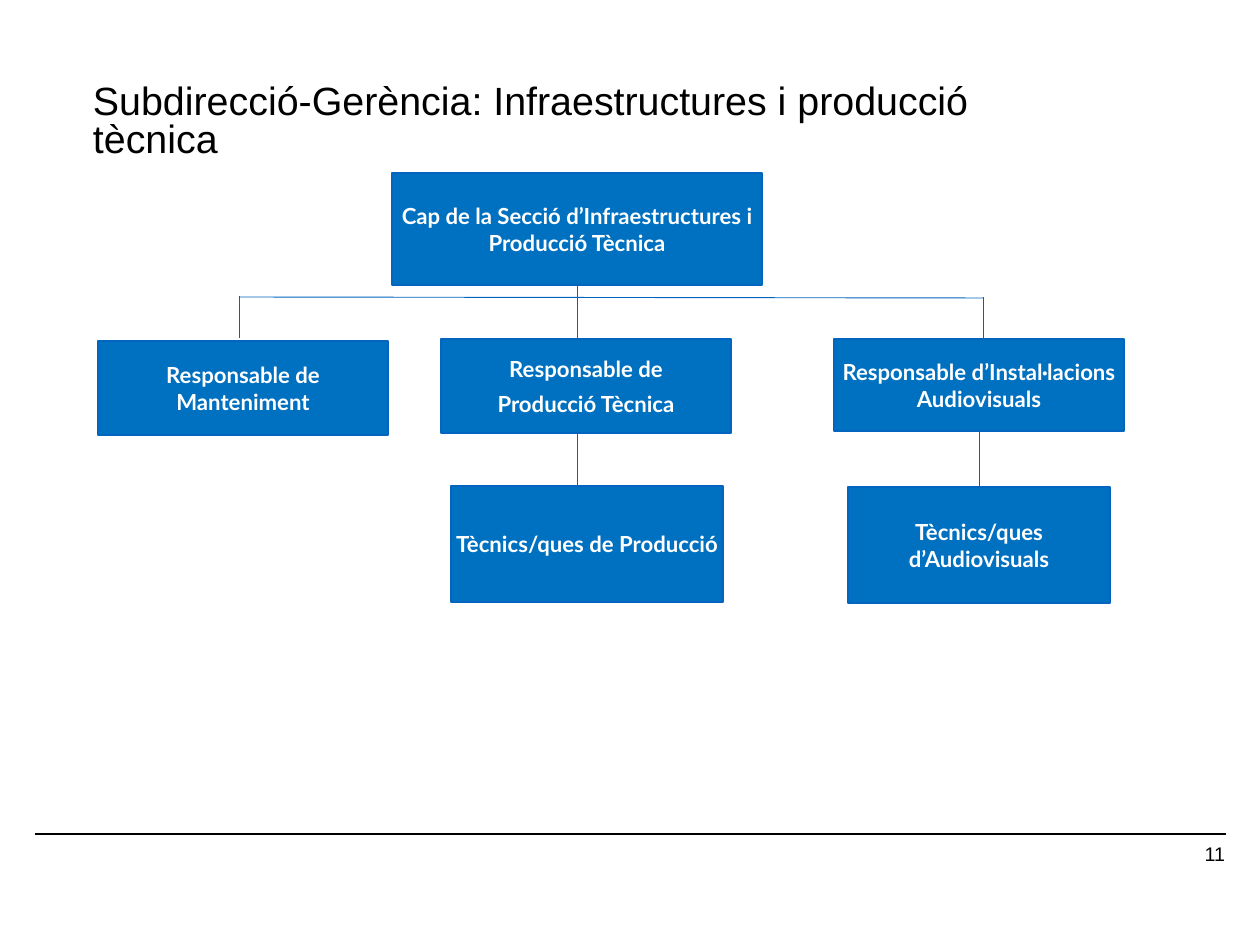
"""Build the organisation chart of the infrastructure and technical production section."""
from dataclasses import dataclass

from lxml.etree import SubElement
from pptx import Presentation
from pptx.dml.color import RGBColor
from pptx.enum.shapes import MSO_CONNECTOR, MSO_SHAPE
from pptx.enum.text import MSO_ANCHOR, PP_ALIGN
from pptx.oxml.ns import qn
from pptx.util import Pt

EMU_PER_PX = 10320
TOP, BOTTOM = 0, 2


@dataclass(frozen=True)
class Theme:
    box_fill: RGBColor = RGBColor(0x00, 0x70, 0xC0)
    box_line: RGBColor = RGBColor(0x03, 0x65, 0xC0)
    branch: RGBColor = RGBColor(0x00, 0x63, 0xBF)
    box_text: RGBColor = RGBColor(0xFF, 0xFF, 0xFF)
    ink: RGBColor = RGBColor(0x00, 0x00, 0x00)
    box_font: str = "Lato"
    text_font: str = "Arial"
    title_size: int = 32
    box_size: int = 18
    number_size: int = 16


THEME = Theme()


def px(length):
    return int(length * EMU_PER_PX)


def set_insets(frame, inset):
    frame.margin_left = frame.margin_right = px(inset)
    frame.margin_top = frame.margin_bottom = px(inset)


def style_font(font, name, size, color, bold=False):
    font.name = name
    font.size = Pt(size)
    font.color.rgb = color
    font.bold = bold


def add_box(slide, left, top, width, height, *lines):
    shape = slide.shapes.add_shape(
        MSO_SHAPE.RECTANGLE, px(left), px(top), px(width), px(height))
    shape.shadow.inherit = False
    shape.fill.solid()
    shape.fill.fore_color.rgb = THEME.box_fill
    shape.line.color.rgb = THEME.box_line
    shape.line.width = Pt(2)
    frame = shape.text_frame
    frame.word_wrap = True
    frame.vertical_anchor = MSO_ANCHOR.MIDDLE
    set_insets(frame, 4)
    for index, line in enumerate(lines):
        paragraph = frame.add_paragraph() if index else frame.paragraphs[0]
        paragraph.text = line
        paragraph.alignment = PP_ALIGN.CENTER
        if index:
            paragraph.space_before = Pt(3.2)
        paragraph.space_after = Pt(3.2)
        style_font(paragraph.font, THEME.box_font, THEME.box_size, THEME.box_text, True)
    return shape


def add_line(slide, start_x, start_y, end_x, end_y, color=THEME.branch, width=0.75):
    connector = slide.shapes.add_connector(
        MSO_CONNECTOR.STRAIGHT, px(start_x), px(start_y), px(end_x), px(end_y))
    connector.line.color.rgb = color
    connector.line.width = Pt(width)
    SubElement(connector._element.spPr, qn("a:effectLst"))
    return connector


def add_text(slide, left, top, width, height, text, size, inset, alignment):
    shape = slide.shapes.add_textbox(px(left), px(top), px(width), px(height))
    frame = shape.text_frame
    frame.word_wrap = True
    set_insets(frame, inset)
    paragraph = frame.paragraphs[0]
    paragraph.text = text
    paragraph.alignment = alignment
    style_font(paragraph.font, THEME.text_font, size, THEME.ink)
    return paragraph


def add_chart_boxes(slide):
    head = add_box(slide, 392, 173, 370, 112,
                   "Cap de la Secció d’Infraestructures i Producció Tècnica")
    add_box(slide, 98, 341, 290, 94, "Responsable de Manteniment")
    production = add_box(slide, 441, 339, 290, 94, "Responsable de", "Producció Tècnica")
    audiovisual = add_box(slide, 834, 339, 290, 92,
                          "Responsable d’Instal·lacions Audiovisuals")
    production_staff = add_box(slide, 451, 486, 272, 116, "Tècnics/ques de Producció")
    audiovisual_staff = add_box(slide, 848, 487, 262, 116, "Tècnics/ques d’Audiovisuals")
    return head, production, audiovisual, production_staff, audiovisual_staff


def add_branches(slide, head, audiovisual, audiovisual_staff):
    add_line(slide, 239, 297, 983, 298)
    add_line(slide, 239, 296, 239, 338)
    add_line(slide, 983, 297, 983, 339)
    add_line(slide, 577, 285, 577, 339).begin_connect(head, BOTTOM)
    add_line(slide, 577, 433, 577, 486)
    staff_link = add_line(slide, 979, 431, 979, 487)
    staff_link.begin_connect(audiovisual, BOTTOM)
    staff_link.end_connect(audiovisual_staff, TOP)


def main():
    presentation = Presentation()
    presentation.slide_width = px(1260)
    presentation.slide_height = px(945)
    slide = presentation.slides.add_slide(presentation.slide_layouts[6])
    title = add_text(slide, 87, 79, 1020, 50,
                     "Subdirecció-Gerència: Infraestructures i producció tècnica",
                     THEME.title_size, 6, PP_ALIGN.LEFT)
    title.line_spacing = 0.8
    head, _, audiovisual, _, audiovisual_staff = add_chart_boxes(slide)
    add_branches(slide, head, audiovisual, audiovisual_staff)
    add_line(slide, 35, 834, 1226, 834, THEME.ink, 1)
    add_text(slide, 939, 836, 292, 36, "11", THEME.number_size, 6, PP_ALIGN.RIGHT)
    presentation.save("out.pptx")


if __name__ == "__main__":
    main()
